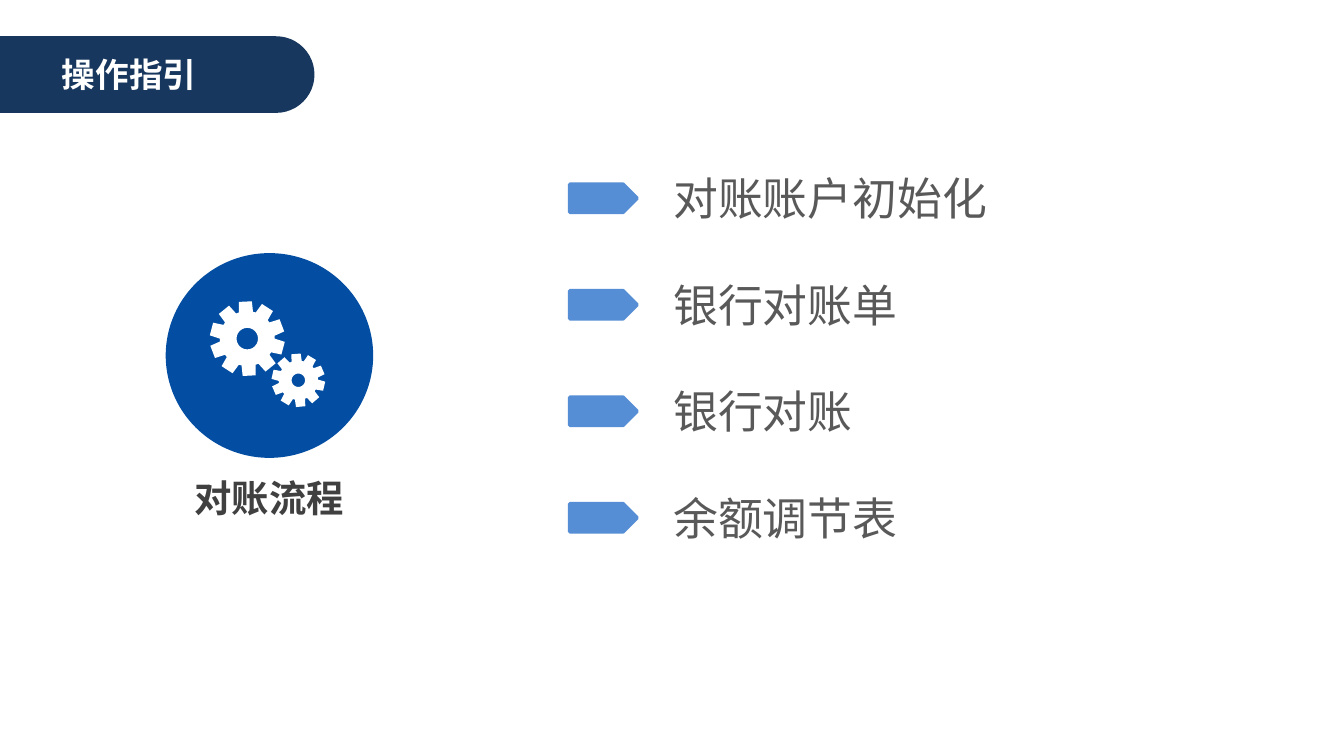
from dataclasses import dataclass
from math import cos, radians, sin

from lxml import etree
from pptx import Presentation
from pptx.dml.color import RGBColor
from pptx.enum.shapes import MSO_SHAPE
from pptx.enum.text import MSO_ANCHOR, MSO_AUTO_SIZE, PP_ALIGN
from pptx.oxml.ns import qn
from pptx.util import Inches, Pt

LEFT, CENTER = PP_ALIGN.LEFT, PP_ALIGN.CENTER
TOP, MIDDLE = MSO_ANCHOR.TOP, MSO_ANCHOR.MIDDLE
PILL, CIRCLE, TAG = MSO_SHAPE.ROUNDED_RECTANGLE, MSO_SHAPE.OVAL, MSO_SHAPE.PENTAGON


@dataclass(frozen=True)
class Theme:
    font: str = "Noto Sans CJK SC"
    white: str = "FFFFFF"
    navy: str = "17375E"
    blue: str = "034EA2"
    tag: str = "558ED5"
    caption: str = "404040"
    body: str = "595959"
    title_size: int = 18
    caption_size: int = 20
    body_size: int = 24


THEME = Theme()


def inches(*values):
    return [Inches(v) for v in values]


def paint(sp, fill, line_width=0):
    sp.shadow.inherit = False
    sp.fill.solid()
    sp.fill.fore_color.rgb = RGBColor.from_string(fill)
    if line_width:
        sp.line.color.rgb = RGBColor.from_string(fill)
        sp.line.width = Pt(line_width)
    else:
        sp.line.fill.background()
    return sp


def add_shape(s, kind, box, fill, line_width=0):
    return paint(s.shapes.add_shape(kind, *inches(*box)), fill, line_width)


def write(sp, box, text, size, color, bold=False, align=LEFT, anchor=MIDDLE, gap=0):
    """Place sp in box and give it one unbulleted paragraph per line of text."""
    sp.left, sp.top, sp.width, sp.height = inches(*box)
    tf = sp.text_frame
    tf.text = text
    tf.word_wrap, tf.auto_size = True, MSO_AUTO_SIZE.NONE
    tf.vertical_anchor = anchor
    for p in tf.paragraphs:
        p.alignment = align
        p.space_before, p.space_after = Pt(0), Pt(gap)
        pPr = p._p.get_or_add_pPr()
        pPr.set("marL", "0")
        pPr.set("indent", "0")
        etree.SubElement(pPr, qn("a:buNone"))
        r = p.runs[0]
        r.font.name, r.font.size, r.font.bold = THEME.font, Pt(size), bold
        r.font.color.rgb = RGBColor.from_string(color)
        etree.SubElement(r._r.rPr, qn("a:ea"), typeface=THEME.font)


def add_gear(s, cx, cy, radius, hole, phase, teeth=10):
    def at(r, angle):
        return inches(cx + r * cos(radians(angle)), cy + r * sin(radians(angle)))

    step = 360 / teeth
    root = 0.73 * radius
    rim = [at(r, phase + i * step + turn) for i in range(teeth)
           for r, turn in ((root, -15), (radius, -10), (radius, 10), (root, 15))]
    bore = [at(hole, angle) for angle in range(0, 360, 15)]
    fb = s.shapes.build_freeform(*rim[0])
    fb.add_line_segments(rim[1:])
    fb.move_to(*bore[0])
    fb.add_line_segments(bore[1:])
    paint(fb.convert_to_shape(), THEME.white)


def header(s, x, y, w, h, text):
    pill = add_shape(s, PILL, (x, y, w, h), THEME.navy)
    pill.adjustments[0] = 0.5
    s.shapes._spTree.insert(2, pill._element)  # behind the title
    write(s.shapes.title, (x + 0.66, y + 0.08, 2.01, 0.4), text,
          THEME.title_size, THEME.white, bold=True)


def process_badge(s, x, y, w, h, text):
    add_shape(s, CIRCLE, (x, y, w, h), THEME.blue, 1)
    add_gear(s, x + 0.6, y + 0.63, 0.28, 0.08, phase=-93)
    add_gear(s, x + 0.98, y + 0.94, 0.2, 0.05, phase=85)
    caption_w = 2.57
    write(s.shapes.add_textbox(0, 0, 0, 0),
          (x + (w - caption_w) / 2, y + h + 0.1, caption_w, 0.41), text,
          THEME.caption_size, THEME.caption, bold=True, align=CENTER)


def step_list(s, x, y, w, h, steps):
    pitch = h / len(steps)
    for i in range(len(steps)):
        add_shape(s, TAG, (x, y + 0.15 + i * pitch, 0.5, 0.21), THEME.tag, 2)
    line_height = 1.2 * THEME.body_size
    write(s.placeholders[1], (x + 0.67, y, w - 0.67, h),
          "\n".join(steps), THEME.body_size, THEME.body, anchor=TOP,
          gap=round(pitch * 72 - line_height, 1))


def main():
    prs = Presentation()
    prs.slide_width = Inches(10)
    prs.slide_height = prs.slide_width * 9 // 16
    s = prs.slides.add_slide(prs.slide_layouts[1])
    header(s, -0.3, 0.27, 2.64, 0.57, "操作指引")
    process_badge(s, 1.24, 1.89, 1.53, 1.51, "对账流程")
    step_list(s, 4.24, 1.22, 3.59, 3.17,
              ["对账账户初始化", "银行对账单", "银行对账", "余额调节表"])
    prs.save("out.pptx")


if __name__ == "__main__":
    main()
